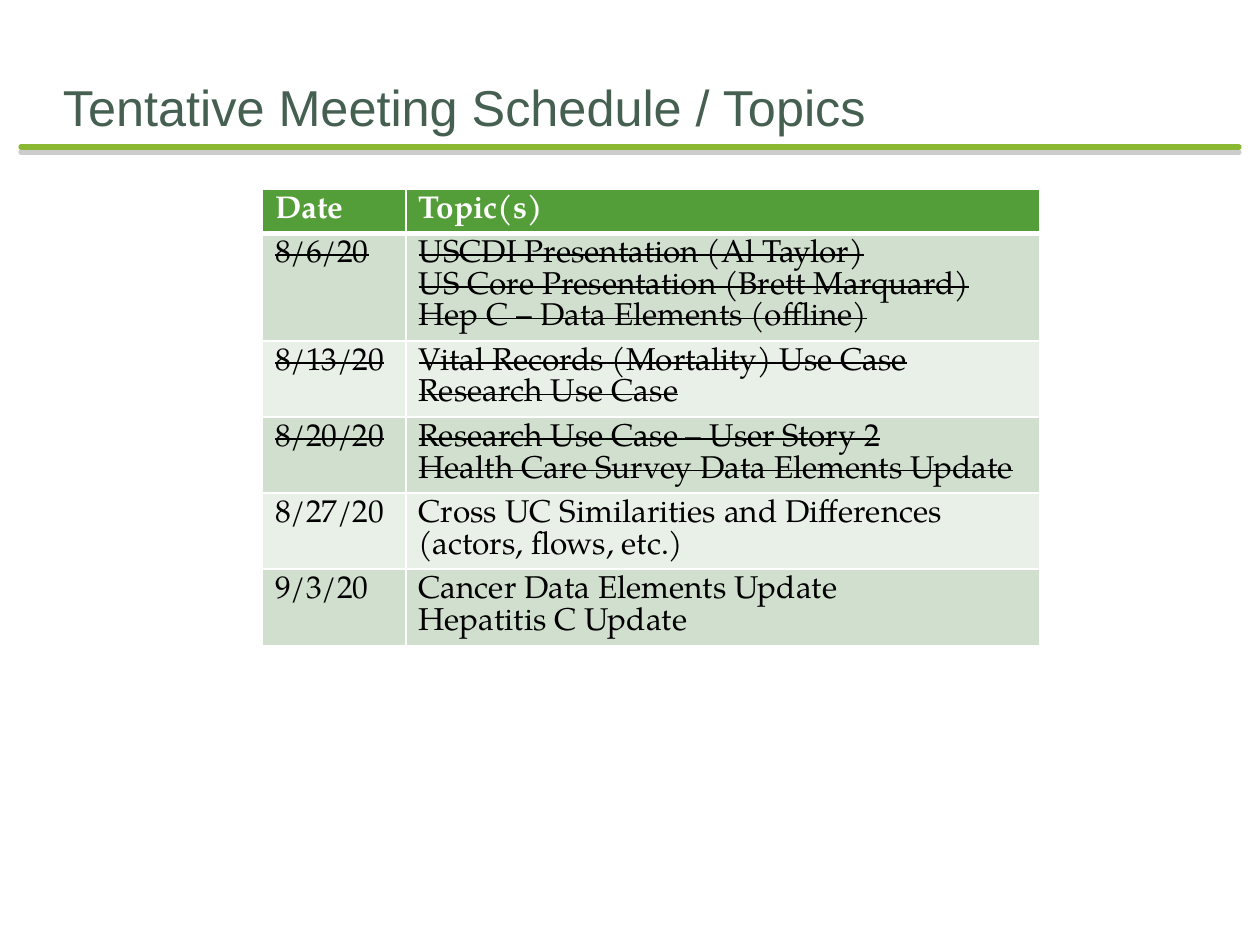
import pptx
import pptx.dml.color
import pptx.enum.shapes
import pptx.enum.text
import pptx.oxml
import pptx.oxml.ns
import pptx.util

Pt = pptx.util.Pt
COLORS = {
    "title": "455F51", "rule": "8AB833", "shadow": "808080",
    "header": "549E39", "odd": "D1DFCE", "even": "E9F0E8",
    "white": "FFFFFF", "text": "000000",
}
LINE_PITCH = 18.1
CELL_PADDING = 7.2
COLUMN_WIDTHS = (82, 362)

# Date, topics, struck through
MEETINGS = [
    ("8/6/20", ["USCDI Presentation (Al Taylor)",
                "US Core Presentation (Brett Marquard)",
                "Hep C – Data Elements (offline)"], True),
    ("8/13/20", ["Vital Records (Mortality) Use Case", "Research Use Case"], True),
    ("8/20/20", ["Research Use Case – User Story 2",
                 "Health Care Survey Data Elements Update"], True),
    ("8/27/20", ["Cross UC Similarities and Differences (actors, flows, etc.)"], False),
    ("9/3/20", ["Cancer Data Elements Update", "Hepatitis C Update"], False),
]
WRAPPED_DATES = {"8/27/20"}


def color(name):
    return pptx.dml.color.RGBColor.from_string(COLORS[name])


def xml(text):
    return pptx.oxml.parse_xml(text.replace(">", f" {pptx.oxml.ns.nsdecls('a')}>", 1))


def write(para, text, shade, **formats):
    span = para.add_run()
    span.text = text
    span.font.color.rgb = color(shade)
    for name, value in formats.items():
        setattr(span.font, name, value)
    return span


def add_title(page, left, top, width, height):
    box = page.shapes.add_textbox(Pt(left), Pt(top), Pt(width), Pt(height))
    frame = box.text_frame
    settings = {
        "word_wrap": True, "vertical_anchor": pptx.enum.text.MSO_ANCHOR.BOTTOM,
        "margin_left": 0, "margin_top": Pt(3.6), "margin_right": 0, "margin_bottom": 0,
    }
    for name, value in settings.items():
        setattr(frame, name, value)
    write(frame.paragraphs[0], "Tentative Meeting Schedule / Topics", "title",
          name="Arial", size=Pt(28.8))


def add_rule(page, left, top, width):
    rule = page.shapes.add_connector(
        pptx.enum.shapes.MSO_CONNECTOR.STRAIGHT,
        Pt(left), Pt(top), Pt(left + width), Pt(top))
    rule.line.color.rgb = color("rule")
    rule.line.width = Pt(3)
    rule.line._get_or_add_ln().set("cap", "rnd")
    # Soft grey shadow straight below the rule
    rule._element.spPr.append(xml(
        f'<a:effectLst><a:outerShdw blurRad="0" dist="{Pt(3)}" dir="5400000">'
        f'<a:srgbClr val="{COLORS["shadow"]}"><a:alpha val="40000"/></a:srgbClr>'
        '</a:outerShdw></a:effectLst>'))


def fill_cell(cell, lines, fill, shade, bold=False, struck=False, bottom=1):
    cell.fill.solid()
    cell.fill.fore_color.rgb = color(fill)
    frame = cell.text_frame
    for index, text in enumerate(lines):
        para = frame.add_paragraph() if index else frame.paragraphs[0]
        para.line_spacing = Pt(LINE_PITCH)
        span = write(para, text, shade, name="TeX Gyre Pagella", size=Pt(18), bold=bold)
        if struck:
            span._r.get_or_add_rPr().set("strike", "sngStrike")
    # Borders come before the fill in the cell properties
    properties = cell._tc.get_or_add_tcPr()
    for index, side in enumerate("LRTB"):
        weight = Pt(bottom if side == "B" else 1)
        properties.insert(index, xml(
            f'<a:ln{side} w="{weight}"><a:solidFill>'
            f'<a:srgbClr val="{COLORS["white"]}"/></a:solidFill></a:ln{side}>'))


def add_schedule(page, left, top):
    line_counts = [1] + [len(topics) + (date in WRAPPED_DATES)
                         for date, topics, _ in MEETINGS]
    heights = [count * LINE_PITCH + CELL_PADDING for count in line_counts]
    table = page.shapes.add_table(
        len(heights), len(COLUMN_WIDTHS), Pt(left), Pt(top),
        Pt(sum(COLUMN_WIDTHS)), Pt(sum(heights))).table
    for column, width in zip(table.columns, COLUMN_WIDTHS):
        column.width = Pt(width)
    for row, height in zip(table.rows, heights):
        row.height = Pt(height)

    # Header row
    for cell, heading in zip(table.rows[0].cells, ("Date", "Topic(s)")):
        fill_cell(cell, [heading], "header", "white", bold=True, bottom=3)

    # One banded row for each meeting
    for number, (date, topics, struck) in enumerate(MEETINGS, 1):
        band = "odd" if number % 2 else "even"
        for cell, lines in zip(table.rows[number].cells, ([date], topics)):
            fill_cell(cell, lines, band, "text", struck=struck,
                      bottom=1)
    # The border under the header is shared with the first meeting row
    for cell in table.rows[1].cells:
        cell._tc.tcPr.find(pptx.oxml.ns.qn("a:lnT")).set("w", str(Pt(3)))


def main():
    deck = pptx.Presentation()
    deck.slide_width, deck.slide_height = Pt(720), Pt(540)
    page = deck.slides.add_slide(deck.slide_layouts[6])
    add_rule(page, 12, 84, 696)
    add_title(page, 36, 36, 648, 42)
    add_schedule(page, 150, 108)
    deck.save("out.pptx")


if __name__ == "__main__":
    main()
